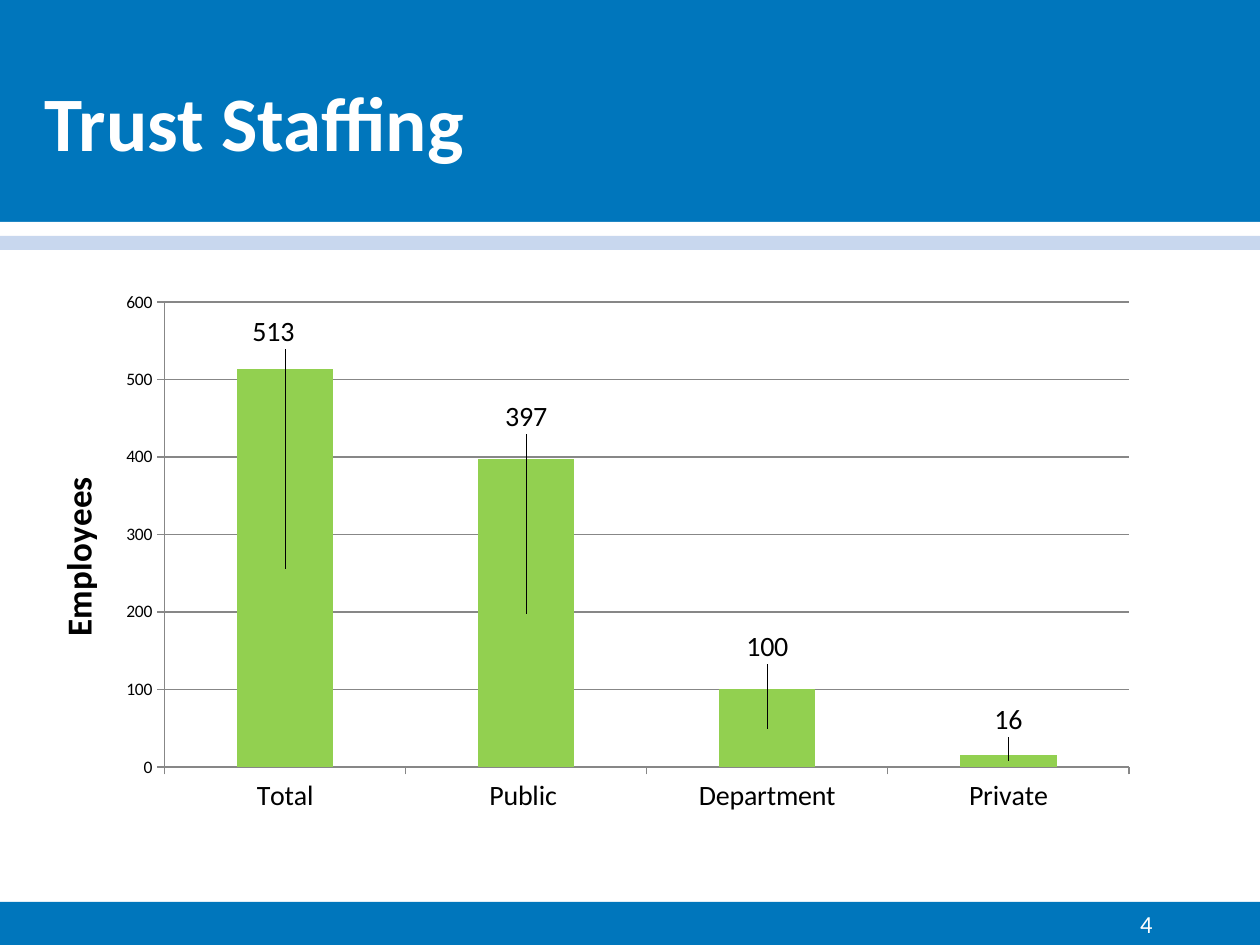
"""Builds the Trust Staffing slide with its column chart."""
from lxml.etree import SubElement
from pptx import Presentation
from pptx.chart.data import CategoryChartData
from pptx.dml.color import RGBColor
from pptx.enum.chart import XL_CHART_TYPE, XL_LABEL_POSITION, XL_TICK_MARK
from pptx.enum.shapes import MSO_SHAPE
from pptx.enum.text import MSO_ANCHOR, PP_ALIGN
from pptx.oxml import parse_xml
from pptx.oxml.ns import nsdecls, qn
from pptx.util import Emu, Pt

EMU_PER_PX = 914400 / 126
COLORS = {
    "backdrop": "969696",
    "white": "FFFFFF",
    "blue": "0076BC",
    "pale": "C8D7EE",
    "green": "92D050",
    "black": "000000",
    "grid": "878787",
}
BANDS = [
    (189, 756, "white"),
    (902, 43, "blue"),
    (0, 222, "blue"),
    (222, 14, "white"),
    (236, 14, "pale"),
]
STAFF = {"Total": 513, "Public ": 397, "Department": 100, "Private": 16}
LABEL_SHIFTS = [(-0.01, -0.35), (0, -0.29), (0, -0.12), (0, -0.06)]


def px(length):
    return Emu(round(length * EMU_PER_PX))


def color(name):
    return RGBColor.from_string(COLORS[name])


def set_layout(element, index, **values):
    for old in element.findall(qn("c:layout")):
        element.remove(old)
    layout = parse_xml(f"<c:layout {nsdecls('c')}><c:manualLayout/></c:layout>")
    for tag, value in values.items():
        SubElement(layout[0], qn(f"c:{tag}")).set("val", str(value))
    element.insert(index, layout)


class SlideBuilder:
    def __init__(self, deck, font_name="Calibri"):
        self.font_name = font_name
        self.slide = deck.slides.add_slide(deck.slide_layouts[5])
        fill = self.slide.background.fill
        fill.solid()
        fill.fore_color.rgb = color("backdrop")

    def style(self, font, size, color_name, bold=False):
        font.name = self.font_name
        font.size = Pt(size)
        font.bold = bold
        font.color.rgb = color(color_name)

    def band(self, top, height, color_name):
        box = self.slide.shapes.add_shape(
            MSO_SHAPE.RECTANGLE, 0, px(top), px(1260), px(height))
        box.shadow.inherit = False
        box.fill.solid()
        box.fill.fore_color.rgb = color(color_name)
        box.line.fill.background()

    def set_text(self, box, text, size, anchor, align, bold=False):
        frame = box.text_frame
        frame.word_wrap = True
        frame.vertical_anchor = anchor
        frame.text = text
        para = frame.paragraphs[0]
        para.alignment = align
        self.style(para.font, size, "white", bold)

    def title(self, text, left, top, width, height):
        box = self.slide.shapes.title
        box.left, box.top, box.width, box.height = map(px, (left, top, width, height))
        tree = self.slide.shapes.element
        tree.remove(box.element)
        tree.append(box.element)
        self.set_text(box, text, 44, MSO_ANCHOR.MIDDLE, PP_ALIGN.LEFT, True)

    def page_number(self, text, left, top, width, height):
        box = self.slide.shapes.add_textbox(*map(px, (left, top, width, height)))
        self.set_text(box, text, 14, MSO_ANCHOR.BOTTOM, PP_ALIGN.RIGHT)

    def staffing_chart(self, left, top, width, height):
        data = CategoryChartData()
        data.categories = list(STAFF)
        data.add_series("Series 1", list(STAFF.values()))
        chart = self.slide.shapes.add_chart(
            XL_CHART_TYPE.COLUMN_STACKED,
            *map(px, (left, top, width, height)), data).chart
        chart.has_legend = False
        chart.has_title = False
        self.style(chart.font, 10, "black")
        set_layout(chart.plots[0]._element.getparent(), 0, layoutTarget="inner",
                   xMode="edge", yMode="edge", x=0.14, y=0.11, w=0.82, h=0.69)
        self.axes(chart)
        self.columns(chart.plots[0])

    def axes(self, chart):
        values, categories = chart.value_axis, chart.category_axis
        values.minimum_scale, values.maximum_scale, values.major_unit = 0, 600, 100
        values.has_major_gridlines = True
        for axis, size in ((values, 10), (categories, 16)):
            axis.major_tick_mark = XL_TICK_MARK.OUTSIDE
            axis.format.line.color.rgb = color("grid")
            self.style(axis.tick_labels.font, size, "black")
        values.major_gridlines.format.line.color.rgb = color("grid")
        title = values.axis_title
        frame = title.text_frame
        frame.text = "Employees"
        self.style(frame.paragraphs[0].font, 20, "black", True)
        frame._txBody.bodyPr.set("rot", "-5400000")
        frame._txBody.bodyPr.set("vert", "horz")
        set_layout(title._element, 1, xMode="edge", yMode="edge", x=0.04, y=0.36)

    def columns(self, plot):
        plot.gap_width = 150
        plot.overlap = 100
        plot.vary_by_categories = False
        series = plot.series[0]
        series.format.fill.solid()
        series.format.fill.fore_color.rgb = color("green")
        for index, (x, y) in enumerate(LABEL_SHIFTS):
            label = series.points[index].data_label
            self.style(label.font, 16, "black")
            label.position = XL_LABEL_POSITION.CENTER
            set_layout(series._element.findall(".//" + qn("c:dLbl"))[index], 1, x=x, y=y)


def main():
    deck = Presentation()
    deck.slide_width, deck.slide_height = px(1260), px(945)
    page = SlideBuilder(deck)
    for band in BANDS:
        page.band(*band)
    page.title("Trust Staffing", 32, 42, 1187, 158)
    page.page_number("4", 903, 882, 262, 63)
    page.staffing_chart(0, 228, 1176, 674)
    deck.save("out.pptx")


if __name__ == "__main__":
    main()
